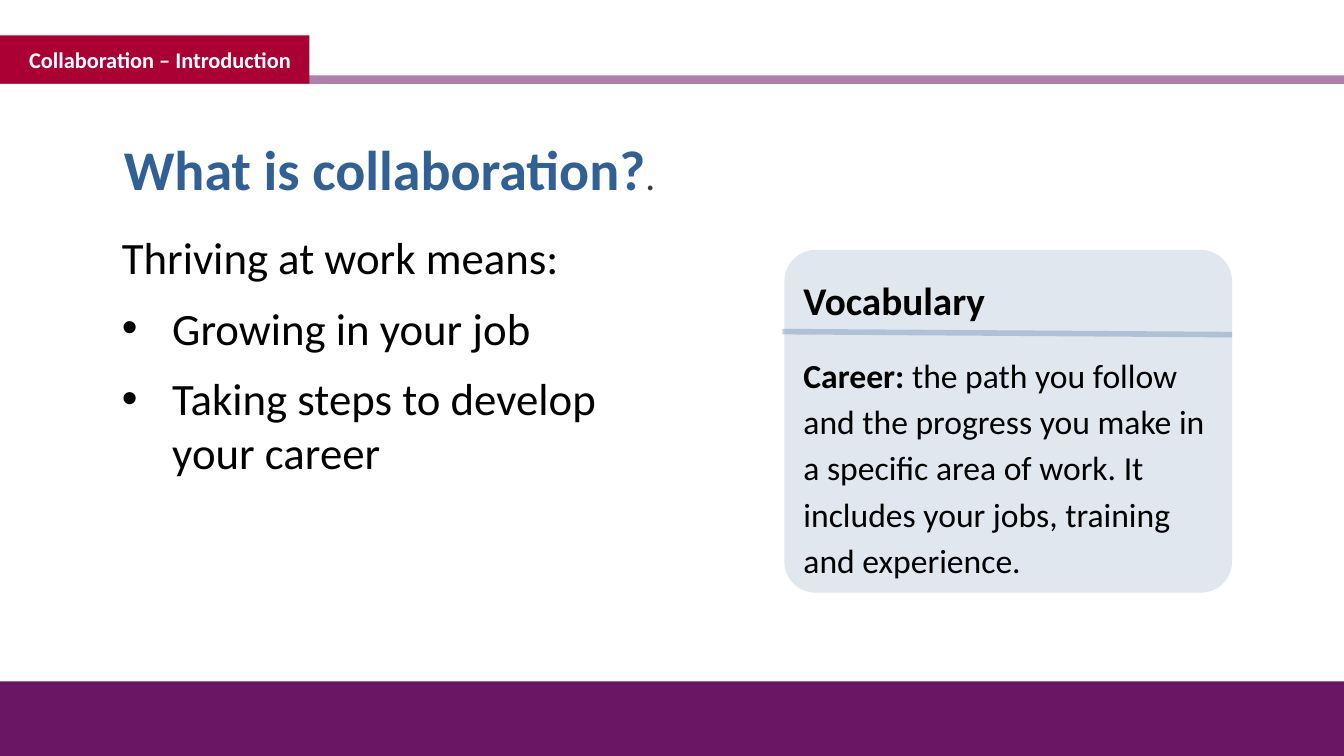
"""Build the slide that introduces collaboration and its vocabulary."""
import dataclasses
import typing

import pptx
import pptx.dml.color
import pptx.enum.shapes
import pptx.enum.text
import pptx.oxml.ns
import pptx.oxml.xmlchemy
import pptx.util

Inches = pptx.util.Inches
Pt = pptx.util.Pt
ShapeType = pptx.enum.shapes.MSO_SHAPE
Anchor = pptx.enum.text.MSO_ANCHOR

BLUE = "316094"
PURPLE = "6B1664"
CRIMSON = "AB0033"
BLACK = "000000"
WHITE = "FFFFFF"
GRAY = "3B3838"
WIDTH = 13.33


@dataclasses.dataclass(frozen=True)
class Run:
    """A stretch of text with one look."""
    text: str
    size: float
    color: str = BLACK
    bold: bool = False


@dataclasses.dataclass(frozen=True)
class Paragraph:
    """Runs with their spacing, indent and bullet."""
    runs: tuple[Run, ...]
    formats: dict[str, typing.Any] = dataclasses.field(default_factory=dict)
    margin: float = 0
    bullet: bool = False


@dataclasses.dataclass(frozen=True)
class Block:
    """A text box, or a filled shape when a kind is given."""
    box: tuple[float, float, float, float]
    paragraphs: tuple[Paragraph, ...] = ()
    kind: typing.Any = None
    fill: str = WHITE
    opacity: int = 100
    corner: float = 0
    frame: dict[str, typing.Any] = dataclasses.field(default_factory=dict)


@dataclasses.dataclass(frozen=True)
class Rule:
    """A straight translucent line."""
    start: tuple[float, float]
    end: tuple[float, float]
    color: str
    width: float
    opacity: int


BULLET_SPACING = {"space_after": Pt(12)}
BODY = Block((1.11, 2.23, 5.31, 3.3), (
    Paragraph((Run("Thriving at work means:", 32),), BULLET_SPACING),
    Paragraph((Run("Growing in your job", 32),), BULLET_SPACING, 0.5, True),
    Paragraph((Run("Taking steps to develop your career", 32),), BULLET_SPACING, 0.5, True),
))
TITLE = Block((1.13, 1.29, 11.33, 0.77), (
    Paragraph((Run("What is collaboration?", 40, BLUE, True), Run(".", 28, GRAY))),
))
HEADER_RULE = Rule((0, 0.79), (WIDTH, 0.79), PURPLE, 6, 55)
SECTION_TAG = Block(
    (0, 0.35, 3.07, 0.48),
    (Paragraph((Run("Collaboration – Introduction", 16, WHITE, True),), margin=0.19),),
    ShapeType.RECTANGLE, CRIMSON, frame={"vertical_anchor": Anchor.MIDDLE},
)
VOCABULARY = Block(
    (7.78, 2.48, 4.44, 3.4),
    (
        Paragraph((Run("Vocabulary", 28, bold=True),),
                  {"line_spacing": 1.15, "space_before": Pt(6), "space_after": Pt(18)}),
        Paragraph((
            Run("Career: ", 24, bold=True),
            Run("the path you follow and the progress you make in a specific area of work. "
                "It includes your jobs, training and experience.", 24),
        ), {"line_spacing": 1.15, "space_after": Pt(8)}),
    ),
    ShapeType.ROUNDED_RECTANGLE, BLUE, 15, 0.091,
    {"margin_left": Inches(0.1), "margin_top": Inches(0.1),
     "margin_right": Inches(0.04), "margin_bottom": Inches(0.04)},
)
VOCABULARY_RULE = Rule((12.22, 3.32), (7.76, 3.29), BLUE, 4, 27)
FOOTER = Block((0, 6.76, WIDTH, 0.74), kind=ShapeType.RECTANGLE, fill=PURPLE)


def apply_formats(target: typing.Any, formats: dict[str, typing.Any]) -> None:
    """Set each named format value on the target."""
    for name, value in formats.items():
        setattr(target, name, value)


def rgb(color: str) -> pptx.dml.color.RGBColor:
    """Turn a hex string into a colour."""
    return pptx.dml.color.RGBColor.from_string(color)


def paint(fill: typing.Any, element: typing.Any, color: str, opacity: int) -> None:
    """Give a fill a solid colour and an opacity in percent."""
    fill.solid()
    fill.fore_color.rgb = rgb(color)
    if opacity < 100:
        solid = element.find(pptx.oxml.ns.qn("a:solidFill"))
        alpha = pptx.oxml.xmlchemy.OxmlElement("a:alpha")
        alpha.set("val", str(opacity * 1000))
        solid[0].append(alpha)


def write_paragraph(paragraph: typing.Any, content: Paragraph) -> None:
    """Fill a paragraph with its runs, spacing and bullet."""
    apply_formats(paragraph, {"alignment": pptx.enum.text.PP_ALIGN.LEFT, **content.formats})
    properties = paragraph._p.get_or_add_pPr()
    properties.set("marL", str(Inches(content.margin)))
    if content.bullet:
        properties.set("indent", str(-Inches(content.margin)))
        for tag, name, value in (("a:buFont", "typeface", "Arial"), ("a:buChar", "char", "•")):
            mark = pptx.oxml.xmlchemy.OxmlElement(tag)
            mark.set(name, value)
            properties.append(mark)
    for item in content.runs:
        run = paragraph.add_run()
        run.text = item.text
        apply_formats(run.font, {"name": "Calibri", "size": Pt(item.size), "bold": item.bold})
        run.font.color.rgb = rgb(item.color)


def draw_block(slide: typing.Any, block: Block) -> None:
    """Draw a text box or a filled shape with its text."""
    box = [Inches(length) for length in block.box]
    if block.kind is None:
        shape = slide.shapes.add_textbox(*box)
    else:
        shape = slide.shapes.add_shape(block.kind, *box)
        shape.shadow.inherit = False
        paint(shape.fill, shape._element.spPr, block.fill, block.opacity)
        shape.line.fill.background()
        if block.corner:
            shape.adjustments[0] = block.corner
    frame = shape.text_frame
    apply_formats(frame, {"word_wrap": True, "vertical_anchor": Anchor.TOP, **block.frame})
    for index, content in enumerate(block.paragraphs):
        write_paragraph(frame.add_paragraph() if index else frame.paragraphs[0], content)


def draw_rule(slide: typing.Any, rule: Rule) -> None:
    """Draw a straight line without a shadow."""
    ends = [Inches(length) for length in rule.start + rule.end]
    connector = slide.shapes.add_connector(pptx.enum.shapes.MSO_CONNECTOR.STRAIGHT, *ends)
    connector.line.width = Pt(rule.width)
    properties = connector._element.spPr
    paint(connector.line.fill, properties.find(pptx.oxml.ns.qn("a:ln")), rule.color, rule.opacity)
    properties.append(pptx.oxml.xmlchemy.OxmlElement("a:effectLst"))


def main() -> None:
    """Draw every element from back to front and save the file."""
    presentation = pptx.Presentation()
    apply_formats(presentation, {"slide_width": Inches(WIDTH), "slide_height": Inches(7.5)})
    slide = presentation.slides.add_slide(presentation.slide_layouts[6])
    for item in (BODY, TITLE, HEADER_RULE, SECTION_TAG, VOCABULARY, VOCABULARY_RULE, FOOTER):
        if isinstance(item, Rule):
            draw_rule(slide, item)
        else:
            draw_block(slide, item)
    presentation.save("out.pptx")


if __name__ == "__main__":
    main()
